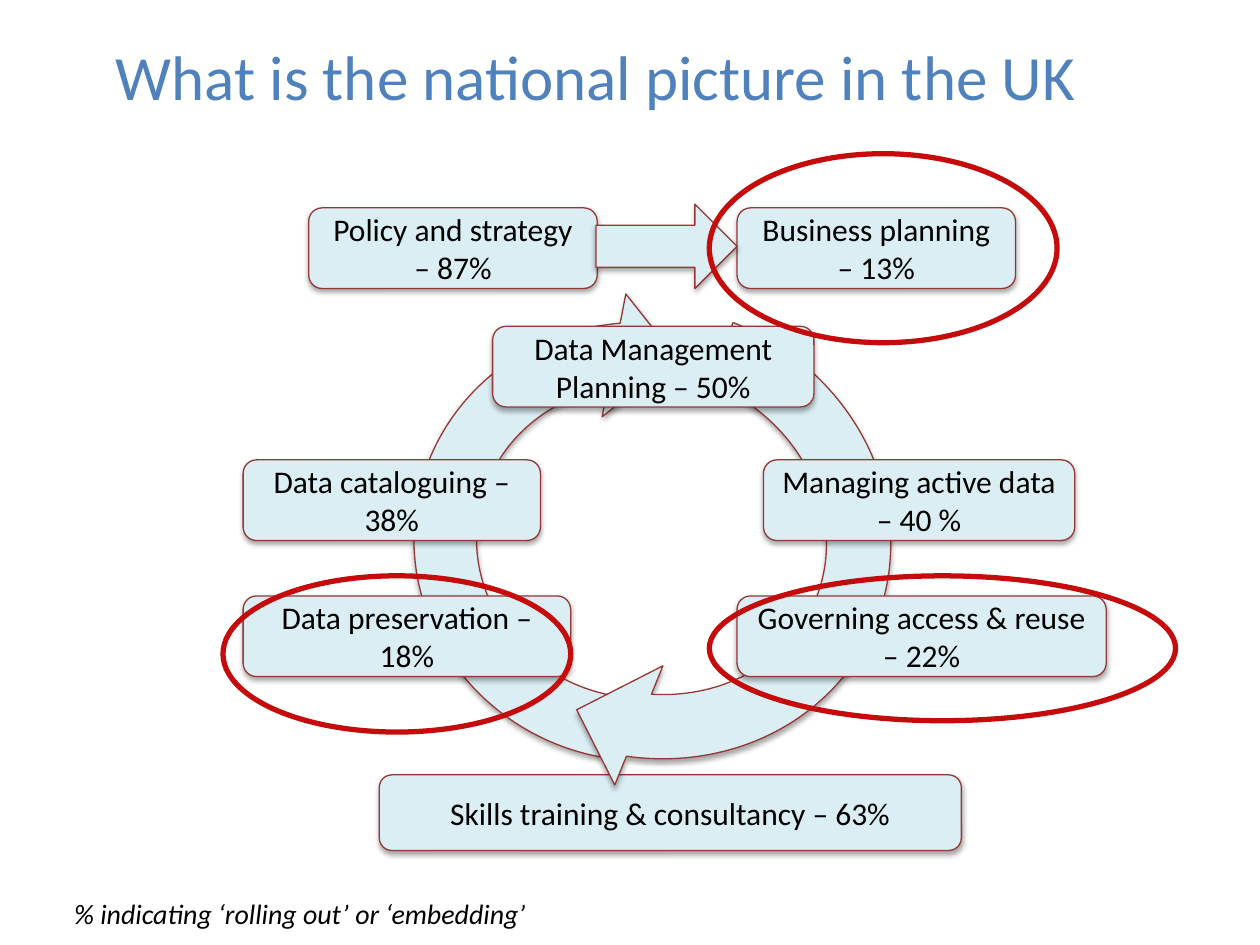
import pptx
import pptx.dml.color
import pptx.enum.shapes
import pptx.enum.text
import pptx.oxml
import pptx.util
from lxml import etree

SHAPES = pptx.enum.shapes.MSO_SHAPE
ALIGN = pptx.enum.text.PP_ALIGN
ANCHOR = pptx.enum.text.MSO_ANCHOR
WIDTH, HEIGHT = pptx.util.Inches(10), pptx.util.Inches(7.5)
COLUMNS, ROWS = 100, 75
PALE, MAROON, RED, BLUE, BLACK = "DBEEF4", "953735", "C50B0B", "4F81BD", "000000"
STAGE_ROWS = {"strategy": 16.5, "planning": 25.9, "active": 36.5, "sharing": 47.3}
STAGE_HEIGHT = 6.4
LEFT_EDGE, RIGHT_EDGE = 19.3, 58.5
SHADOW = (
    '<a:effectLst xmlns:a="http://schemas.openxmlformats.org/drawingml/2006/main">'
    '<a:outerShdw blurRad="39370" dist="22860" dir="5400000" rotWithShape="0">'
    '<a:srgbClr val="000000"><a:alpha val="35000"/></a:srgbClr>'
    "</a:outerShdw></a:effectLst>"
)


def colour(value):
    """Turn a hex string into a colour."""
    return pptx.dml.color.RGBColor.from_string(value)


def place(column, row, columns, rows):
    """Turn grid columns and rows into left, top, width and height."""
    across, down = WIDTH / COLUMNS, HEIGHT / ROWS
    return [round(n) for n in (column * across, row * down, columns * across, rows * down)]


def set_all(target, values):
    """Set every attribute named in a dict."""
    for name, value in values.items():
        setattr(target, name, value)


def write(frame, words, size, ink, align, italic=None, **layout):
    """Write one formatted paragraph into a text frame."""
    set_all(frame, layout)
    paragraph = frame.paragraphs[0]
    paragraph.alignment = align
    run = paragraph.add_run()
    run.text = words
    set_all(run.font, {"name": "Calibri", "size": pptx.util.Pt(size), "italic": italic})
    run.font.color.rgb = colour(ink)


def add_outlined(slide, preset, grid, line, weight):
    """Add an unfilled, unshadowed shape with a coloured outline."""
    outlined = slide.shapes.add_shape(preset, *place(*grid))
    outlined.shadow.inherit = False
    outlined.fill.background()
    outlined.line.color.rgb = colour(line)
    outlined.line.width = pptx.util.Pt(weight)
    return outlined


def add_pale(slide, preset, grid, rotation=0):
    """Add a pale shape with a maroon outline and a soft shadow."""
    pale = add_outlined(slide, preset, grid, MAROON, 0.75)
    pale.fill.solid()
    pale.fill.fore_color.rgb = colour(PALE)
    pale.rotation = rotation
    properties = pale.element.spPr
    effects = properties.find(pptx.oxml.ns.qn("a:effectLst"))
    properties.replace(effects, etree.fromstring(SHADOW))
    return pale


def add_stage(slide, words, grid):
    """Add a rounded box naming one stage and its share."""
    stage = add_pale(slide, SHAPES.ROUNDED_RECTANGLE, grid)
    write(stage.text_frame, words, 18, BLACK, ALIGN.CENTER,
          word_wrap=True, vertical_anchor=ANCHOR.MIDDLE)


def add_words(slide, words, grid, size, ink, anchor, wrap, italic=None):
    """Add a left-aligned text box."""
    box = slide.shapes.add_textbox(*place(*grid))
    write(box.text_frame, words, size, ink, ALIGN.LEFT, italic,
          word_wrap=wrap, vertical_anchor=anchor)


def main():
    """Build the slide and save it."""
    deck = pptx.Presentation()
    set_all(deck, {"slide_width": WIDTH, "slide_height": HEIGHT})
    slide = deck.slides.add_slide(deck.slide_layouts[6])

    add_stage(slide, "Skills training & consultancy – 63%", (30.1, 61.5, 46.2, 6))
    for grid, rotation in (
        ((31, 22.5, 39.7, 41), 280.9),
        ((31.1, 20.2, 40.8, 43.9), 112),
    ):
        add_pale(slide, SHAPES.CIRCULAR_ARROW, grid, rotation)

    for words, column, level, columns in (
        ("Policy and strategy – 87%", 24.5, "strategy", 22.9),
        ("Business planning – 13%", RIGHT_EDGE, "strategy", 22.1),
        ("Data Management Planning – 50%", 39.1, "planning", 25.5),
        ("Managing active data – 40 %", 60.6, "active", 24.7),
        ("Data cataloguing – 38%", LEFT_EDGE, "active", 23.6),
        ("Governing access & reuse – 22%", RIGHT_EDGE, "sharing", 29.3),
        ("Data preservation – 18%", LEFT_EDGE, "sharing", 26),
    ):
        add_stage(slide, words, (column, STAGE_ROWS[level], columns, STAGE_HEIGHT))
    add_pale(slide, SHAPES.RIGHT_ARROW, (47.3, 16.2, 11.2, 6.7))

    add_words(slide, "What is the national picture in the UK",
              (8.2, -0.3, 90, 12.5), 36, BLUE, ANCHOR.MIDDLE, True)
    add_words(slide, "% indicating ‘rolling out’ or ‘embedding’",
              (4.9, 70.7, 40.6, 3.7), 16, BLACK, ANCHOR.TOP, False, True)

    for highlight in (
        (56.3, 12.2, 27.6, 15),
        (17.7, 45.7, 27.6, 12.4),
        (56.3, 45.7, 37, 11.5),
    ):
        add_outlined(slide, SHAPES.OVAL, highlight, RED, 3)

    deck.save("out.pptx")


if __name__ == "__main__":
    main()
